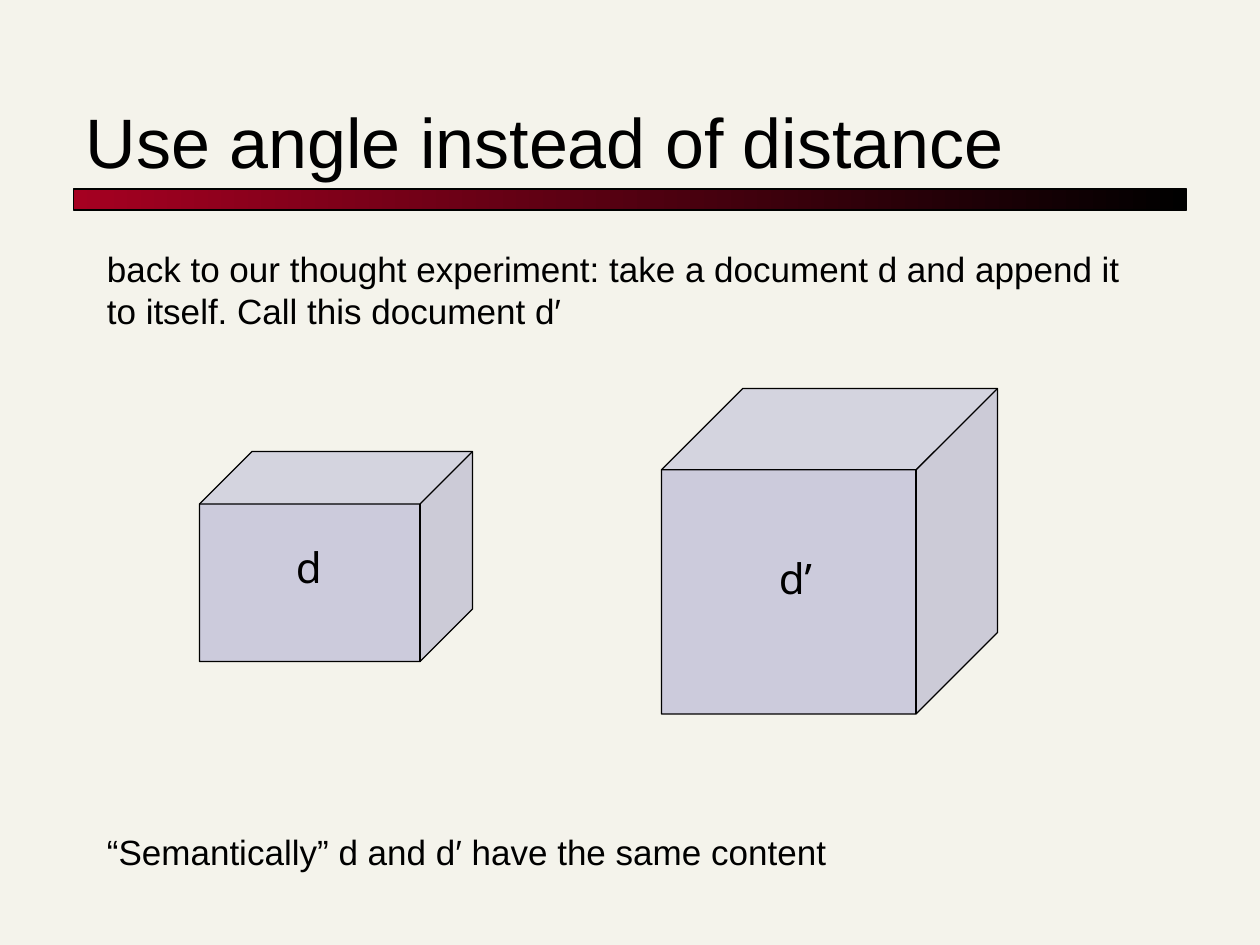
from lxml import etree
from pptx import Presentation
from pptx.dml.color import RGBColor
from pptx.enum import shapes, text
from pptx.oxml import ns
from pptx import util as u

THEME = {
    "paper": RGBColor.from_string("F4F3EB"),
    "ink": RGBColor.from_string("000000"),
    "accent": RGBColor.from_string("A50021"),
    "cube": RGBColor.from_string("000090"),
    "cube_alpha": 16,
    "outline": u.Pt(0.75),
    "font": "Arial",
    "label_font": "Noto Sans",
    "title": u.Pt(40),
    "body": u.Pt(20),
    "label": u.Pt(24),
}

deck = Presentation()
deck.slide_width, deck.slide_height = u.Inches(10), u.Inches(7.5)
COLUMN = deck.slide_width / 120
ROW = deck.slide_height / 90
slide = deck.slides.add_slide(deck.slide_layouts[6])
slide.background.fill.solid()
slide.background.fill.fore_color.rgb = THEME["paper"]


def cells(left, top, width, height):
    return int(left * COLUMN), int(top * ROW), int(width * COLUMN), int(height * ROW)


def write(place, paragraphs, size, font, anchor=text.MSO_ANCHOR.TOP, wrap=True, gap=0):
    frame = slide.shapes.add_textbox(*cells(*place)).text_frame
    frame.word_wrap = wrap
    frame.vertical_anchor = anchor
    for index, wording in enumerate(paragraphs):
        paragraph = frame.add_paragraph() if index else frame.paragraphs[0]
        paragraph.space_before = u.Pt(gap if index else 0)
        run = paragraph.add_run()
        run.text = wording
        run.font.size, run.font.name = THEME[size], THEME[font]
        run.font.color.rgb = THEME["ink"]


rule = slide.shapes.add_shape(shapes.MSO_SHAPE.RECTANGLE, *cells(7, 18, 106, 2))
rule.shadow.inherit = False
rule.fill.gradient()
rule.fill.gradient_angle = 0
for stop, shade in zip(rule.fill.gradient_stops, ("accent", "ink")):
    stop.color.rgb = THEME[shade]
rule.line.color.rgb = THEME["ink"]
rule.line.width = THEME["outline"]

write((7, 5, 106, 13), ["Use angle instead of distance"], "title", "font",
      anchor=text.MSO_ANCHOR.BOTTOM)
write((9, 23, 102, 64), [
    "back to our thought experiment: take a document d and append it to itself. Call this document d′",
    "“Semantically” d and d′ have the same content",
], "body", "font", gap=285)

documents = [
    ("d", (19, 43, 26, 20), (27, 51, 4.9, 6)),
    ("d’", (63, 37, 32, 31), (73, 52, 6.2, 6)),
]
for name, cube_place, name_place in documents:
    document = slide.shapes.add_shape(shapes.MSO_SHAPE.CUBE, *cells(*cube_place))
    document.shadow.inherit = False
    document.fill.solid()
    document.fill.fore_color.rgb = THEME["cube"]
    tint = document.fill._xPr.find(ns.qn("a:solidFill"))[0]
    etree.SubElement(tint, ns.qn("a:alpha"), val=str(THEME["cube_alpha"] * 1000))
    document.line.color.rgb = THEME["ink"]
    document.line.width = THEME["outline"]
    write(name_place, [name], "label", "label_font", wrap=False)

deck.save("out.pptx")
